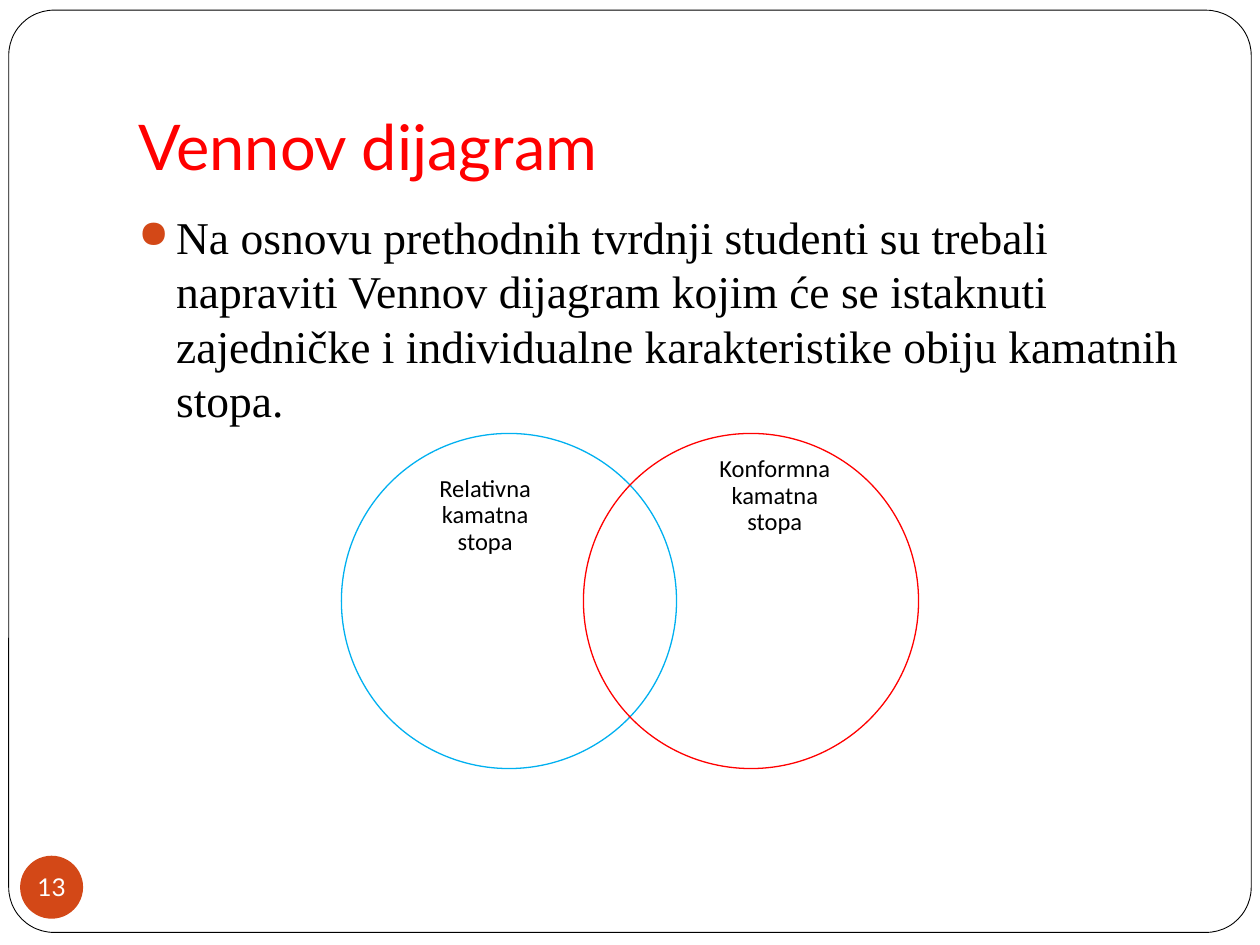
from lxml import etree
from pptx import Presentation
from pptx.dml.color import RGBColor
from pptx.enum.shapes import MSO_SHAPE
from pptx.enum.text import MSO_ANCHOR, PP_ALIGN
from pptx.oxml.ns import qn
from pptx.util import Pt

ROUNDED, OVAL = MSO_SHAPE.ROUNDED_RECTANGLE, MSO_SHAPE.OVAL
TOP, MIDDLE, BOTTOM = MSO_ANCHOR.TOP, MSO_ANCHOR.MIDDLE, MSO_ANCHOR.BOTTOM
LEFT, CENTER = PP_ALIGN.LEFT, PP_ALIGN.CENTER
TITLE_ONLY = 5

ACCENT, RED, BLUE = "D34817", "FF0000", "00B0F0"
BLACK, WHITE = "000000", "FFFFFF"

DIAMETER = 191.5
CIRCLE_TOP = 247.7
LABEL_WIDTH = 78.5
# circle left, colour, label left, label top, label
SETS = [
    (195.1, BLUE, 238, 272, "Relativna kamatna stopa"),
    (333.4, RED, 403.5, 261, "Konformna kamatna stopa"),
]


def color(value):
    return RGBColor.from_string(value)


def apply(target, values):
    for name, value in values.items():
        setattr(target, name, value)


def write(shape, text, font, size, ink, align=LEFT, anchor=TOP,
          insets=(0, 0, 0, 0), wrap=True, spacing=None):
    """Fill a shape with one formatted paragraph; insets run left, top, right, bottom."""
    frame = shape.text_frame
    apply(frame, {"word_wrap": wrap, "vertical_anchor": anchor})
    sides = ("margin_left", "margin_top", "margin_right", "margin_bottom")
    apply(frame, {side: Pt(inset) for side, inset in zip(sides, insets)})
    para = frame.paragraphs[0]
    apply(para, {"alignment": align, "line_spacing": spacing})
    span = para.add_run()
    span.text = text
    apply(span.font, {"name": font, "size": Pt(size)})
    span.font.color.rgb = color(ink)
    return para


def add_outline(page, kind, box, fill=None, line=None, weight=0.75):
    shape = page.shapes.add_shape(kind, *map(Pt, box))
    shape.shadow.inherit = False
    if fill:
        shape.fill.solid()
        shape.fill.fore_color.rgb = color(fill)
    else:
        shape.fill.background()
    if line:
        shape.line.color.rgb = color(line)
        shape.line.width = Pt(weight)
    else:
        shape.line.fill.background()
    return shape


def add_frame(page):
    """Put the rounded border behind everything else."""
    border = add_outline(page, ROUNDED, (5, 5.8, 710, 527), WHITE, BLACK, 0.5)
    border.adjustments[0] = 0.049
    page.shapes._spTree.insert(2, border._element)


def set_title(page, text):
    title = page.shapes.title
    apply(title, {"left": Pt(72), "top": Pt(21.6), "width": Pt(612), "height": Pt(90)})
    write(title, text, "Lato", 36, RED, anchor=BOTTOM, insets=(7.2, 3.6, 7.2, 7.2))


def add_bullet(para, indent):
    props = para._p.get_or_add_pPr()
    props.set("marL", str(Pt(indent)))
    props.set("indent", str(-Pt(indent)))
    tint = etree.SubElement(props, qn("a:buClr"))
    etree.SubElement(tint, qn("a:srgbClr"), val=ACCENT)
    etree.SubElement(props, qn("a:buSzPct"), val="85000")
    etree.SubElement(props, qn("a:buChar"), char="●")


def add_body(page, text):
    box = page.shapes.add_textbox(Pt(72), Pt(116), Pt(612), Pt(132))
    para = write(box, text, "Times New Roman", 26, BLACK,
                 insets=(7.2, 3.6, 7.2, 3.6), spacing=Pt(31.1))
    add_bullet(para, 21.6)


def add_set(page, left, line, label_left, label_top, label):
    add_outline(page, OVAL, (left, CIRCLE_TOP, DIAMETER, DIAMETER), line=line)
    box = page.shapes.add_textbox(Pt(label_left), Pt(label_top), Pt(LABEL_WIDTH), Pt(46))
    write(box, label, "Calibri", 14, BLACK, align=CENTER, spacing=0.9)


def add_page_number(page, number):
    badge = add_outline(page, OVAL, (11.5, 489, 36, 36), ACCENT)
    write(badge, number, "Lato", 14, WHITE, align=CENTER, anchor=MIDDLE, wrap=False)


def main():
    deck = Presentation()
    apply(deck, {"slide_width": Pt(720), "slide_height": Pt(540)})
    page = deck.slides.add_slide(deck.slide_layouts[TITLE_ONLY])
    add_frame(page)
    set_title(page, "Vennov dijagram")
    add_page_number(page, "13")
    add_body(page, "Na osnovu prethodnih tvrdnji studenti su trebali napraviti "
                   "Vennov dijagram kojim će se istaknuti zajedničke i individualne "
                   "karakteristike obiju kamatnih stopa.")
    for venn_set in SETS:
        add_set(page, *venn_set)
    deck.save("out.pptx")


if __name__ == "__main__":
    main()
